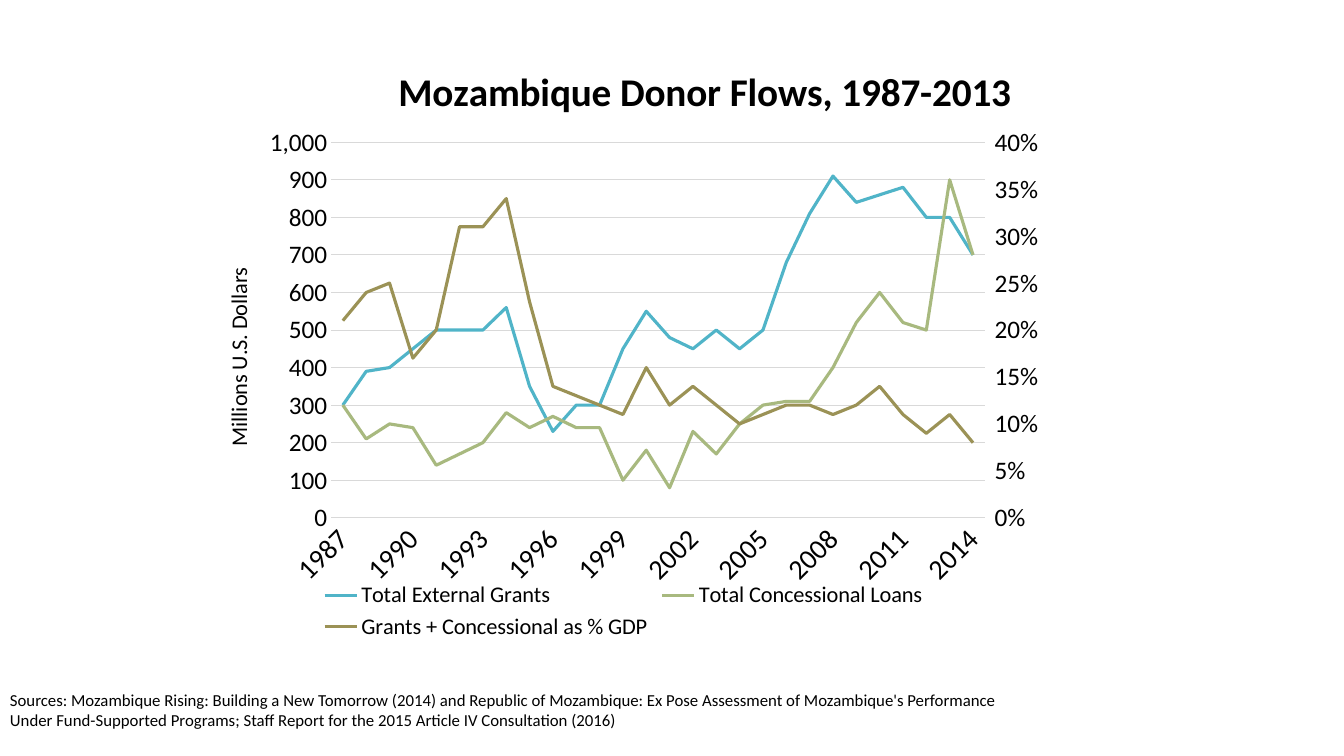
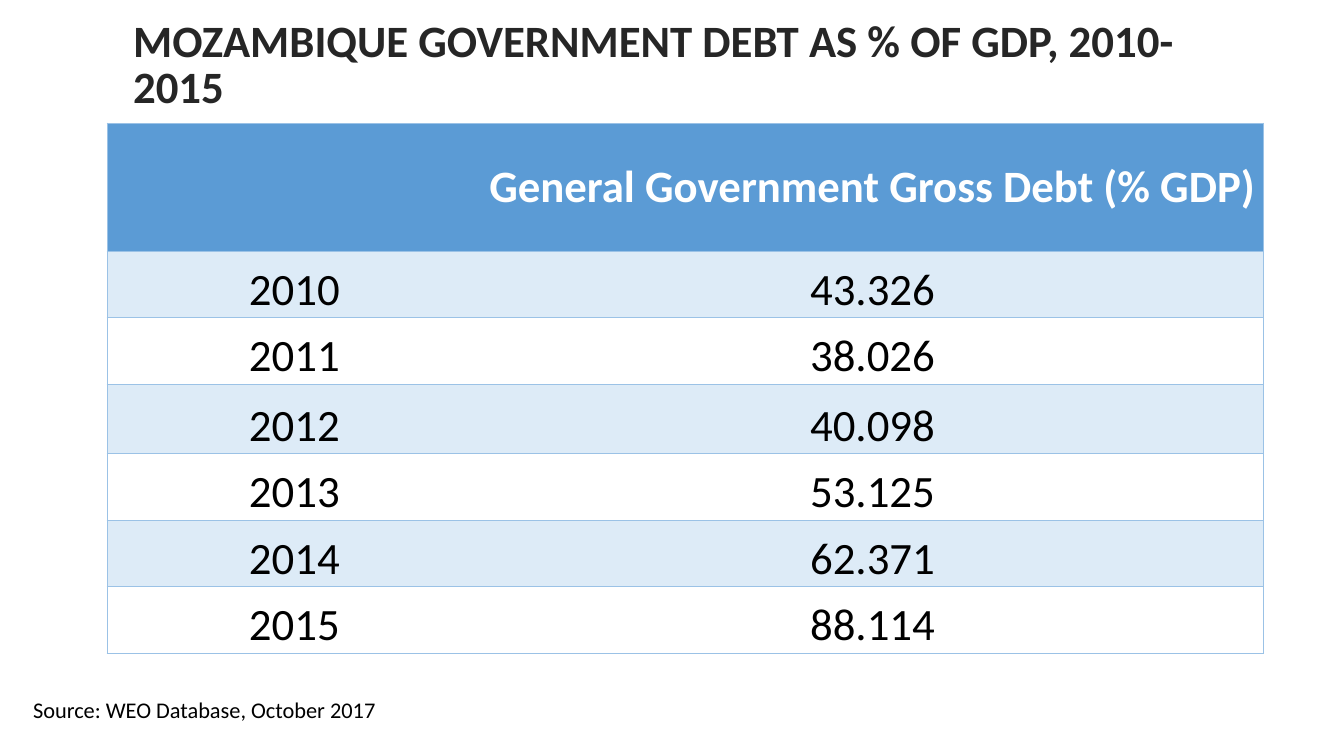
from copy import deepcopy

from lxml import etree
from pptx import Presentation
from pptx.chart.data import CategoryChartData
from pptx.dml.color import RGBColor
from pptx.enum.chart import XL_CHART_TYPE, XL_LEGEND_POSITION, XL_TICK_MARK
from pptx.enum.text import MSO_ANCHOR, MSO_AUTO_SIZE, PP_ALIGN
from pptx.oxml.ns import qn
from pptx.util import Inches, Pt

LINE_CHART = XL_CHART_TYPE.LINE
LEGEND_BOTTOM = XL_LEGEND_POSITION.BOTTOM
NO_TICK = XL_TICK_MARK.NONE
MIDDLE, BOTTOM = MSO_ANCHOR.MIDDLE, MSO_ANCHOR.BOTTOM
LEFT, CENTER = PP_ALIGN.LEFT, PP_ALIGN.CENTER
NO_AUTOFIT = MSO_AUTO_SIZE.NONE
TITLE_ONLY, BLANK = 5, 6
PLAIN_TABLE_STYLE = "{2D5ABB26-0587-4C30-8999-92F81FD0307C}"

BLACK = RGBColor(0x00, 0x00, 0x00)
WHITE = RGBColor(0xFF, 0xFF, 0xFF)
TITLE_GREY = RGBColor(0x26, 0x26, 0x26)
GRID_GREY = RGBColor(0xD9, 0xD9, 0xD9)
GRANTS_BLUE = RGBColor(0x50, 0xB4, 0xC8)
LOANS_GREEN = RGBColor(0xA8, 0xB9, 0x7F)
GDP_OLIVE = RGBColor(0x9B, 0x92, 0x56)
HEADER_BLUE = RGBColor(0x5B, 0x9B, 0xD5)
BAND_BLUE = RGBColor(0xDD, 0xEB, 0xF7)
BORDER_BLUE = RGBColor(0x9B, 0xC2, 0xE6)

YEARS = range(1987, 2015)
GRANTS = [300, 390, 400, 450, 500, 500, 500, 560, 350, 230, 300, 300, 450, 550,
          480, 450, 500, 450, 500, 680, 810, 910, 840, 860, 880, 800, 800, 700]
LOANS = [300, 210, 250, 240, 140, 170, 200, 280, 240, 270, 240, 240, 100, 180,
         80, 230, 170, 250, 300, 310, 310, 400, 520, 600, 520, 500, 900, 700]
GDP_SHARE = [0.21, 0.24, 0.25, 0.17, 0.2, 0.31, 0.31, 0.34, 0.23, 0.14, 0.13,
             0.12, 0.11, 0.16, 0.12, 0.14, 0.12, 0.1, 0.11, 0.12, 0.12, 0.11,
             0.12, 0.14, 0.11, 0.09, 0.11, 0.08]
FLOWS = [("Total External Grants", GRANTS, "#,##0", GRANTS_BLUE),
         ("Total Concessional Loans", LOANS, "#,##0", LOANS_GREEN),
         ("Grants + Concessional as % GDP", GDP_SHARE, "0%", GDP_OLIVE)]
DEBT = [("", "General Government Gross Debt (% GDP)"),
        ("2010", "43.326"), ("2011", "38.026"), ("2012", "40.098"),
        ("2013", "53.125"), ("2014", "62.371"), ("2015", "88.114")]


def set_values(element, **values):
    """Set the val attribute of the named chart children."""
    for tag, value in values.items():
        element.find(".//" + qn("c:" + tag)).set("val", value)


def place(parent, **fractions):
    """Give a chart part a manual layout, in fractions of the chart."""
    layout = parent.get_or_add_layout() if hasattr(parent, "get_or_add_layout") else parent.find(qn("c:layout"))
    if layout is None:
        layout = etree.Element(qn("c:layout"))
        parent.insert(0, layout)
    for child in list(layout):
        layout.remove(child)
    manual = etree.SubElement(layout, qn("c:manualLayout"))
    if "w" in fractions:
        etree.SubElement(manual, qn("c:layoutTarget"), val="inner")
    for tag in ("xMode", "yMode"):
        etree.SubElement(manual, qn("c:" + tag), val="edge")
    for tag, value in fractions.items():
        etree.SubElement(manual, qn("c:" + tag), val=str(value))


class Deck:
    font = "Calibri"

    def __init__(self):
        self.prs = Presentation()
        self.prs.slide_width = Inches(13.33)
        self.prs.slide_height = Inches(7.5)

    def new_slide(self, layout):
        self.slide = self.prs.slides.add_slide(self.prs.slide_layouts[layout])

    def style(self, font, size, color=BLACK, bold=False):
        font.name, font.size, font.bold = self.font, Pt(size), bold
        font.color.rgb = color

    def run(self, paragraph, text, size, color=BLACK, bold=False):
        run = paragraph.add_run()
        run.text = text
        self.style(run.font, size, color, bold)

    def title(self, text, left, top, width, height):
        title = self.slide.shapes.title
        title.left, title.top = Inches(left), Inches(top)
        title.width, title.height = Inches(width), Inches(height)
        frame = title.text_frame
        frame.auto_size, frame.vertical_anchor = NO_AUTOFIT, MIDDLE
        heading = frame.paragraphs[0]
        heading.alignment = LEFT
        heading.line_spacing, heading.space_before = 0.85, Pt(13)
        self.run(heading, text, 32, TITLE_GREY, True)

    def source_note(self, text, left, top, width, height, size):
        note = self.slide.shapes.add_textbox(
            Inches(left), Inches(top), Inches(width), Inches(height))
        note.text_frame.word_wrap = True
        self.run(note.text_frame.paragraphs[0], text, size)

    def chart_title(self, owner, text, size, bold, x, y):
        """Title of a chart or of one of its axes."""
        owner.has_title = True
        title = owner.chart_title if hasattr(owner, "chart_title") else owner.axis_title
        self.run(title.text_frame.paragraphs[0], text, size, BLACK, bold)
        place(title._element, x=x, y=y)
        return title

    def flow_chart(self, left, top, width, height):
        data = CategoryChartData()
        data.categories = [str(year) for year in YEARS]
        for name, values, number_format, _ in FLOWS:
            data.add_series(name, values, number_format)
        chart = self.slide.shapes.add_chart(
            LINE_CHART, Inches(left), Inches(top), Inches(width),
            Inches(height), data).chart
        self.style(chart.font, 10)
        self.chart_title(chart, "Mozambique Donor Flows, 1987-2013", 28, True, 0.23, 0.03)

        # Series and legend
        for series, (_, _, _, color) in zip(chart.plots[0].series, FLOWS):
            series.smooth = False
            series.format.line.color.rgb = color
            series.format.line.width = Pt(2.25)
        chart.has_legend = True
        chart.legend.position = LEGEND_BOTTOM
        chart.legend.include_in_layout = False
        self.style(chart.legend.font, 16)

        # Year axis: every third label, slanted
        years = chart.category_axis
        years.major_tick_mark = NO_TICK
        self.style(years.tick_labels.font, 20)
        years.format.line.color.rgb = GRID_GREY
        years.format.line.width = Pt(0.75)
        years._element.find(".//" + qn("a:bodyPr")).set("rot", "-2700000")
        skip = etree.Element(qn("c:tickLblSkip"), val="3")
        years._element.find(qn("c:noMultiLvlLbl")).addprevious(skip)

        # Dollar axis
        dollars = chart.value_axis
        dollars.minimum_scale, dollars.maximum_scale = 0, 1000
        dollars.major_unit = 100
        dollars.major_tick_mark = NO_TICK
        dollars.tick_labels.number_format = "#,##0"
        dollars.tick_labels.number_format_is_linked = False
        self.style(dollars.tick_labels.font, 18)
        dollars.format.line.fill.background()
        dollars.major_gridlines.format.line.color.rgb = GRID_GREY
        dollars.major_gridlines.format.line.width = Pt(0.75)
        label = self.chart_title(dollars, "Millions U.S. Dollars", 16, False, 0.03, 0.37)
        label.text_frame._txBody.bodyPr.set("rot", "-5400000")

        self.share_axis(chart)
        place(chart._chartSpace.chart.plotArea, x=0.16, y=0.17, w=0.76, h=0.62)

    def share_axis(self, chart):
        """Move the last series to a percent axis on the right."""
        lines = chart.plots[0]._element
        years, dollars = chart.category_axis._element, chart.value_axis._element
        share_lines = deepcopy(lines)
        for series in share_lines.findall(qn("c:ser"))[:-1]:
            share_lines.remove(series)
        lines.remove(lines.findall(qn("c:ser"))[-1])
        lines.addnext(share_lines)
        for axis_id, value in zip(share_lines.findall(qn("c:axId")), ("501", "502")):
            axis_id.set("val", value)

        share_years, shares = deepcopy(years), deepcopy(dollars)
        set_values(share_years, axId="501", crossAx="502", delete="1")
        for tag in ("c:majorGridlines", "c:title"):
            shares.remove(shares.find(qn(tag)))
        set_values(shares, axId="502", crossAx="501", axPos="r", max="0.4",
                   majorUnit="0.05", majorTickMark="out", crosses="max")
        shares.find(qn("c:numFmt")).set("formatCode", "0%")
        dollars.addnext(shares)
        shares.addnext(share_years)

    def border(self, cell, sides):
        for side in sides:
            line = etree.SubElement(cell._tc.get_or_add_tcPr(),
                                    qn("a:ln" + side), w=str(Pt(0.5)))
            fill = etree.SubElement(line, qn("a:solidFill"))
            etree.SubElement(fill, qn("a:srgbClr"), val=str(BORDER_BLUE))

    def debt_table(self, left, top, widths, heights):
        frame = self.slide.shapes.add_table(
            len(heights), len(widths), Inches(left), Inches(top),
            Inches(sum(widths)), Inches(sum(heights)))
        table = frame.table
        table._tbl.tblPr.find(qn("a:tableStyleId")).text = PLAIN_TABLE_STYLE
        for column, width in zip(table.columns, widths):
            column.width = Inches(width)
        for index, (row, height, texts) in enumerate(zip(table.rows, heights, DEBT)):
            row.height = Inches(height)
            header = index == 0
            fill = HEADER_BLUE if header else BAND_BLUE if index % 2 else WHITE
            for cell, text, outer_side in zip(row.cells, texts, "LR"):
                self.border(cell, outer_side + "TB")
                cell.fill.solid()
                cell.fill.fore_color.rgb = fill
                cell.margin_left = cell.margin_right = cell.margin_top = Inches(0.01)
                cell.margin_bottom = 0
                cell.vertical_anchor = MIDDLE if header else BOTTOM
                paragraph = cell.text_frame.paragraphs[0]
                paragraph.alignment = CENTER
                if text:
                    self.run(paragraph, text, 32, WHITE if header else BLACK, header)


def main():
    deck = Deck()

    # Donor flows
    deck.new_slide(BLANK)
    deck.flow_chart(1.92, 0.39, 8.53, 6.01)
    deck.source_note(
        "Sources: Mozambique Rising: Building a New Tomorrow (2014) and Republic of "
        "Mozambique: Ex Pose Assessment of Mozambique's Performance Under "
        "Fund-Supported Programs; Staff Report for the 2015 Article IV "
        "Consultation (2016)", 0, 6.79, 10.25, 0.5, 12)

    # Government debt
    deck.new_slide(TITLE_ONLY)
    deck.title("MOZAMBIQUE GOVERNMENT DEBT AS % OF GDP, 2010-2015",
               1.22, 0.28, 11.31, 0.76)
    deck.debt_table(1.06, 1.22, [3.72, 7.75],
                    [1.27, 0.66, 0.66, 0.69, 0.66, 0.66, 0.66])
    deck.source_note("Source: WEO Database, October 2017", 0.23, 6.86, 3.71, 0.37, 16)

    deck.prs.save("out.pptx")


if __name__ == "__main__":
    main()
